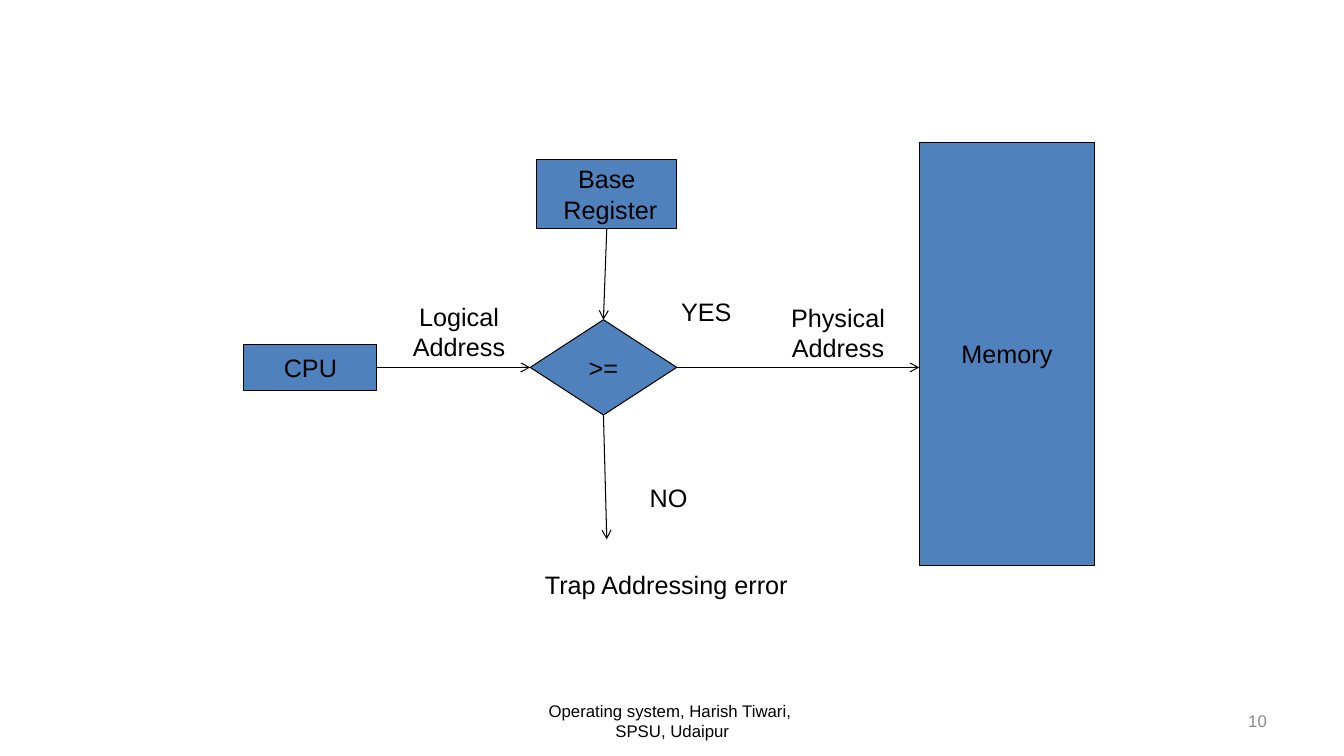
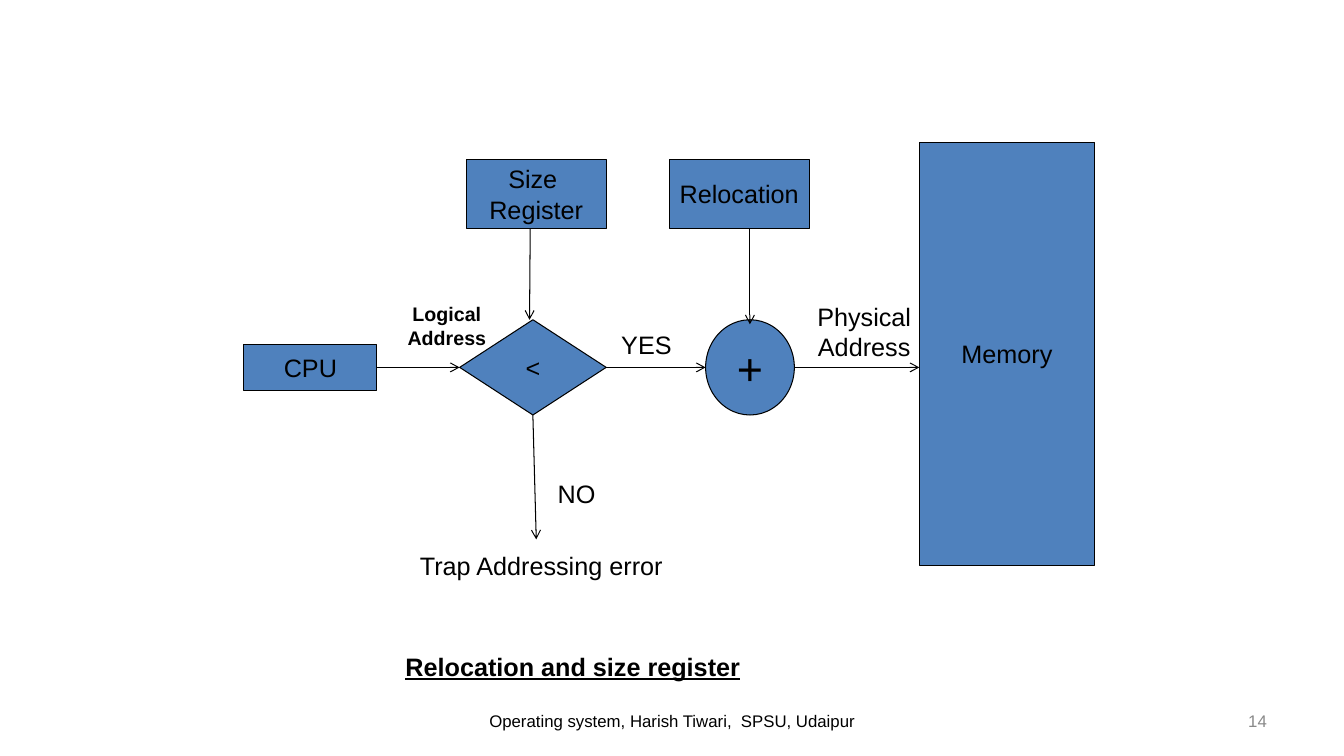
from dataclasses import dataclass
from typing import Any, Optional, Union

from lxml import etree
from pptx import Presentation
from pptx import util as u
from pptx.dml.color import RGBColor
from pptx.enum import shapes, text
from pptx.oxml.ns import qn


@dataclass(frozen=True)
class Theme:
    font: str = "Arial"
    ink: str = "000000"
    box: str = "4F81BD"
    muted: str = "898989"
    body: int = 18
    small: int = 14
    footer: int = 12
    symbol: int = 32
    line: float = 0.75


THEME = Theme()
WIDTH, HEIGHT = u.Inches(13.33), u.Inches(7.5)
TOP, LEFT, BOTTOM, RIGHT = range(4)
SHAPE = shapes.MSO_SHAPE
ANCHOR = text.MSO_ANCHOR
ALIGN = text.PP_ALIGN


# All places and lengths are percentages of the slide's width and height.
@dataclass(frozen=True)
class Area:
    x: float
    y: float
    w: float
    h: float

    def emu(self) -> tuple:
        return (*point(self.x, self.y), *point(self.w, self.h))


@dataclass(frozen=True)
class Node:
    words: str
    area: Area
    kind: Any = SHAPE.RECTANGLE
    size: int = THEME.body


@dataclass(frozen=True)
class Label:
    words: str
    area: Area
    size: int = THEME.body
    bold: bool = False
    color: str = THEME.ink
    align: Any = ALIGN.CENTER
    anchor: Any = ANCHOR.TOP


@dataclass(frozen=True)
class Joint:
    node: str
    side: int


@dataclass(frozen=True)
class Spot:
    x: float
    y: float


End = Union[Joint, Spot]


@dataclass(frozen=True)
class Diagram:
    number: str
    footer: str
    nodes: dict[str, Node]
    arrows: list[tuple[End, End]]
    labels: list[Label]
    caption: Optional[Label] = None


def point(x: float, y: float) -> tuple[int, int]:
    return round(WIDTH * x / 100), round(HEIGHT * y / 100)


def apply(target: Any, values: dict[str, Any]) -> None:
    for name, value in values.items():
        setattr(target, name, value)


def write(frame: Any, words: str, size: int, color: str = THEME.ink,
          align: Any = ALIGN.CENTER, frame_format: Optional[dict] = None,
          **font_format: Any) -> None:
    frame.text = words
    apply(frame, frame_format or {})
    for paragraph in frame.paragraphs:
        paragraph.alignment = align
        for run in paragraph.runs:
            apply(run.font, {"name": THEME.font, "size": u.Pt(size), **font_format})
            run.font.color.rgb = RGBColor.from_string(color)


def outline(line: Any) -> None:
    line.color.rgb = RGBColor.from_string(THEME.ink)
    line.width = u.Pt(THEME.line)


def draw_node(slide: Any, node: Node) -> Any:
    shape = slide.shapes.add_shape(node.kind, *node.area.emu())
    shape.shadow.inherit = False
    shape.fill.solid()
    shape.fill.fore_color.rgb = RGBColor.from_string(THEME.box)
    outline(shape.line)
    write(shape.text_frame, node.words, node.size,
          frame_format={"word_wrap": False, "vertical_anchor": ANCHOR.MIDDLE})
    return shape


def draw_label(slide: Any, label: Label) -> None:
    box = slide.shapes.add_textbox(*label.area.emu())
    write(box.text_frame, label.words, label.size, label.color, label.align,
          {"word_wrap": True, "vertical_anchor": label.anchor}, bold=label.bold)


def draw_caption(slide: Any, label: Label) -> None:
    title = slide.shapes.title
    apply(title, dict(zip(("left", "top", "width", "height"), label.area.emu())))
    write(title.text_frame, label.words, label.size, label.color, label.align,
          {"word_wrap": True, "vertical_anchor": label.anchor,
           "auto_size": text.MSO_AUTO_SIZE.NONE},
          bold=label.bold, underline=True)


def draw_arrow(slide: Any, start: End, end: End, drawn: dict[str, Any]) -> None:
    places = [point(e.x, e.y) if isinstance(e, Spot) else (0, 0) for e in (start, end)]
    arrow = slide.shapes.add_connector(
        shapes.MSO_CONNECTOR.STRAIGHT, *places[0], *places[1])
    for stop, connect in ((start, arrow.begin_connect), (end, arrow.end_connect)):
        if isinstance(stop, Joint):
            connect(drawn[stop.node], stop.side)
    outline(arrow.line)
    etree.SubElement(arrow.line._get_or_add_ln(), qn("a:tailEnd"), type="arrow")
    etree.SubElement(arrow._element.spPr, qn("a:effectLst"))


def draw_diagram(deck: Any, diagram: Diagram) -> None:
    layout = "Title Only" if diagram.caption else "Blank"
    slide = deck.slides.add_slide(deck.slide_layouts.get_by_name(layout))
    drawn = {key: draw_node(slide, node) for key, node in diagram.nodes.items()}
    for start, end in diagram.arrows:
        draw_arrow(slide, start, end, drawn)
    for label in diagram.labels:
        draw_label(slide, label)
    if diagram.caption:
        draw_caption(slide, diagram.caption)
    # Footer and slide number
    draw_label(slide, Label(diagram.footer, Area(34.2, 92.65, 31.65, 5.3),
                            THEME.footer, anchor=ANCHOR.MIDDLE))
    draw_label(slide, Label(diagram.number, Area(71.7, 92.65, 23.3, 5.3),
                            THEME.footer, color=THEME.muted, align=ALIGN.RIGHT,
                            anchor=ANCHOR.MIDDLE))


# Parts found in both diagrams
AXIS = 48.6
REGISTER_BOTTOM = 30.2
MEMORY_LEFT = 68.4
TRAP_TOP = 71.35
DECISION_HEIGHT = 12.6
DECISION_TOP = AXIS - DECISION_HEIGHT / 2
CPU = Node("CPU", Area(18.15, AXIS - 3, 9.9, 6))
MEMORY = Node("Memory", Area(MEMORY_LEFT, 18.8, 13.05, 56))
MEMORY_ENTRY = Spot(MEMORY_LEFT, AXIS)
CPU_TO_DECISION = (Joint("cpu", RIGHT), Joint("decision", LEFT))


def register(words: str, x: float) -> Node:
    return Node(words, Area(x, 21.1, 10.4, 9.1))


def decision(words: str, x: float) -> Node:
    return Node(words, Area(x, DECISION_TOP, 10.9, DECISION_HEIGHT),
                SHAPE.FLOWCHART_DECISION)


def answer(words: str, x: float, y: float) -> Label:
    return Label(words, Area(x, y, 5.9, 5.3))


def address(kind: str, x: float, y: float, **style: Any) -> Label:
    return Label(f"{kind} Address", Area(x, y, 10.4, 9.45), **style)


def trap(x: float, y: float) -> Label:
    return Label("Trap Addressing error", Area(x, y, 19.75, 5.3))


BASE_REGISTER = Diagram(
    number="10",
    footer="Operating system, Harish Tiwari, \nSPSU, Udaipur",
    nodes={
        "cpu": CPU,
        "decision": decision(">=", 39.45),
        "base": register("Base\n Register", 39.95),
        "memory": MEMORY,
    },
    arrows=[
        CPU_TO_DECISION,
        (Joint("base", BOTTOM), Joint("decision", TOP)),
        (Joint("decision", BOTTOM), Spot(45.15, TRAP_TOP)),
        (Joint("decision", RIGHT), MEMORY_ENTRY),
    ],
    labels=[
        address("Logical", 28.95, 39.2),
        address("Physical", 57.15, 39.3),
        answer("YES", 49.6, 38.5),
        answer("NO", 46.8, 63.2),
        trap(39.7, 74.65),
    ],
)

ADDER = Area(52.5, DECISION_TOP, 6.6, DECISION_HEIGHT)
ADDER_MIDDLE = ADDER.x + ADDER.w / 2

RELOCATION_REGISTER = Diagram(
    number="14",
    footer="Operating system, Harish Tiwari,  SPSU, Udaipur",
    nodes={
        "cpu": CPU,
        "decision": decision("<", 34.2),
        "size": register("Size \nRegister", 34.7),
        "relocation": register("Relocation", 49.8),
        "adder": Node("+", ADDER, SHAPE.OVAL, THEME.symbol),
        "memory": MEMORY,
    },
    arrows=[
        CPU_TO_DECISION,
        (Spot(39.45, REGISTER_BOTTOM), Spot(39.4, DECISION_TOP)),
        (Joint("decision", BOTTOM), Spot(39.9, TRAP_TOP)),
        (Joint("decision", RIGHT), Spot(ADDER.x, AXIS)),
        (Spot(ADDER_MIDDLE, REGISTER_BOTTOM), Spot(ADDER_MIDDLE, 42.9)),
        (Spot(ADDER.x + ADDER.w, AXIS), MEMORY_ENTRY),
    ],
    labels=[
        address("Logical", 28.05, 39.3, size=THEME.small, bold=True),
        address("Physical", 59.1, 39.2),
        answer("YES", 45.15, 42.95),
        answer("NO", 39.95, 62.65),
        trap(30.4, 72.1),
    ],
    caption=Label("Relocation and size register",
                  Area(19.75, 85.45, 45.75, 5.3), bold=True),
)


def main() -> None:
    deck = Presentation()
    apply(deck, {"slide_width": WIDTH, "slide_height": HEIGHT})
    for diagram in (BASE_REGISTER, RELOCATION_REGISTER):
        draw_diagram(deck, diagram)
    deck.save("out.pptx")


if __name__ == "__main__":
    main()
